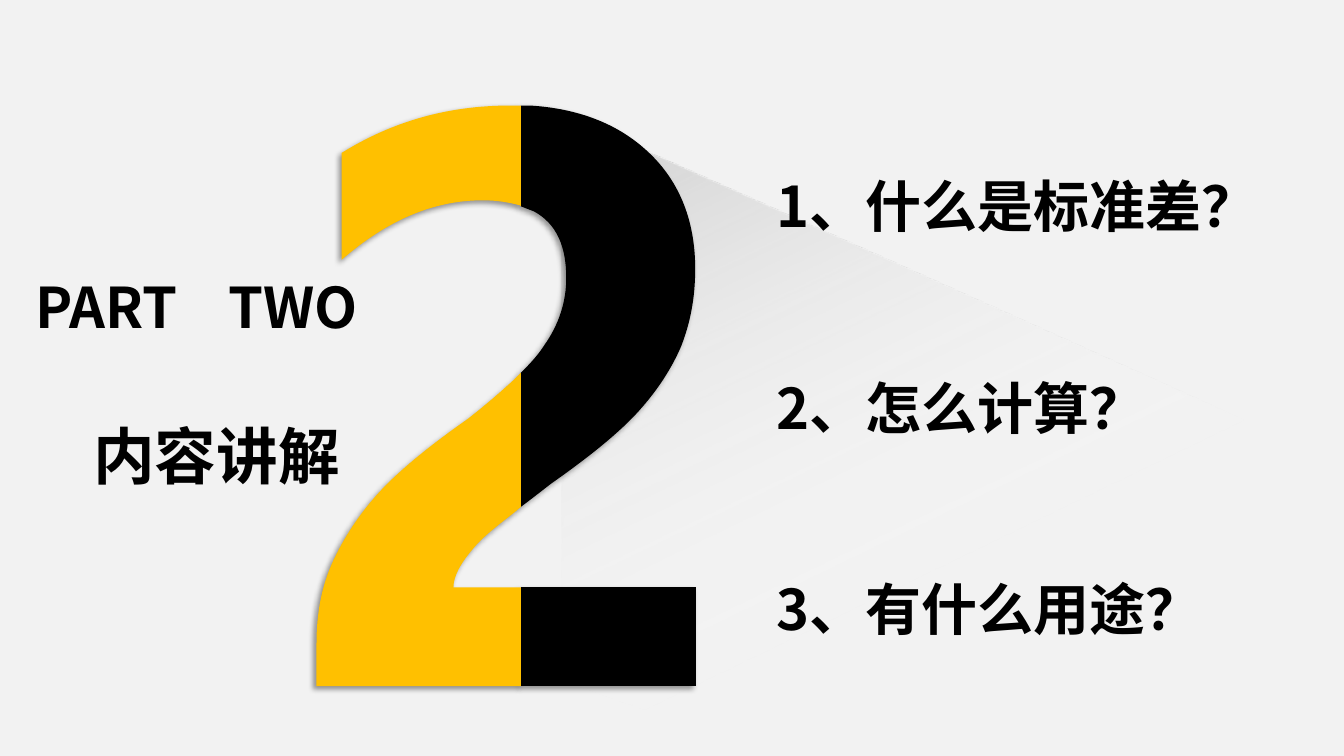
import dataclasses

import pptx
import pptx.dml.color
import pptx.enum.text
import pptx.oxml
import pptx.oxml.ns
import pptx.util

NAMESPACE = pptx.oxml.ns.nsdecls("a")


@dataclasses.dataclass(frozen=True)
class Theme:
    background: str = "F2F2F2"
    ink: str = "000000"
    accent: str = "FFC000"
    beam_tint: str = "85A3D9"
    beam_start: str = "BFBFBF"
    beam_end: str = "FFFFFF"
    latin_font: str = "Noto Sans CJK JP"
    chinese_font: str = "Noto Sans CJK SC"
    body_size: int = 40
    title_size: int = 44


@dataclasses.dataclass(frozen=True)
class Box:
    left: int
    top: int
    width: int
    height: int


THEME = Theme()

# Outlines: a pair is a corner, six numbers are a Bézier curve.
NUMERAL_GRID = (377, 576)
NUMERAL_PIECES = [
    (THEME.ink, [
        (203, 0), (213, 0), (260, 3, 298, 18, 326, 43),
        (359, 72, 376, 112, 376, 162), (376, 191, 371, 216, 362, 239),
        (352, 262, 338, 283, 320, 303), (302, 323, 273, 347, 233, 375),
        (224, 382, 215, 389, 207, 395), (203, 398), (203, 265), (205, 263),
        (214, 254, 221, 246, 226, 238), (241, 217, 248, 194, 248, 171),
        (248, 139, 238, 117, 216, 105), (203, 100)]),
    (THEME.ink, [(203, 478), (377, 478), (377, 576), (203, 576)]),
    (THEME.accent, [
        (192, 0), (203, 0), (203, 100), (202, 99),
        (191, 96, 179, 94, 165, 94), (116, 94, 70, 114, 25, 153),
        (25, 47), (75, 16, 130, 0, 192, 0)]),
    (THEME.accent, [
        (203, 265), (203, 398), (196, 404), (178, 418, 164, 429, 156, 439),
        (143, 454, 136, 467, 136, 478), (203, 478), (203, 576), (0, 576),
        (0, 534), (0, 504, 5, 477, 16, 453), (27, 429, 42, 406, 61, 385),
        (80, 364, 110, 339, 150, 311), (168, 297, 183, 284, 196, 272)]),
]
BEAM_GRID = (932, 512)
BEAM_OUTLINE = [(0, 0), (932, 0), (932, 465), (230, 512)]


def color(value):
    return pptx.dml.color.RGBColor.from_string(value)


def add_outline(shapes, box, grid, outline):
    def place(x, y):
        return (round(box.left + x * box.width / grid[0]),
                round(box.top + y * box.height / grid[1]))

    corners = [place(*segment[-2:]) for segment in outline]
    builder = shapes.build_freeform(*corners[0], scale=1.0)
    builder.add_line_segments(corners[1:], close=True)
    shape = builder.convert_to_shape()
    shape.shadow.inherit = False
    shape.line.fill.background()

    # Bend the sides that are curves
    sides = list(shape._element.iter(pptx.oxml.ns.qn("a:lnTo")))
    for side, segment in zip(sides, outline[1:]):
        if len(segment) == 6:
            controls = [place(*segment[i:i + 2]) for i in (0, 2, 4)]
            points = "".join(f'<a:pt x="{x - shape.left}" y="{y - shape.top}"/>'
                             for x, y in controls)
            side.getparent().replace(side, pptx.oxml.parse_xml(
                f'<a:cubicBezTo {NAMESPACE}>{points}</a:cubicBezTo>'))
    return shape


def add_beam(slide, box):
    shape = add_outline(slide.shapes, box, BEAM_GRID, BEAM_OUTLINE)
    shape.rotation = 24.2
    shape.fill.gradient()
    gradient = shape._element.spPr.find(pptx.oxml.ns.qn("a:gradFill"))
    # python-pptx cannot set the opacity of gradient stops
    gradient.getparent().replace(gradient, pptx.oxml.parse_xml(
        f'<a:gradFill {NAMESPACE} rotWithShape="1"><a:gsLst>'
        f'<a:gs pos="0"><a:srgbClr val="{THEME.beam_tint}"><a:alpha val="54000"/></a:srgbClr></a:gs>'
        f'<a:gs pos="0"><a:srgbClr val="{THEME.beam_start}"/></a:gs>'
        f'<a:gs pos="54000"><a:srgbClr val="{THEME.beam_end}"><a:alpha val="0"/></a:srgbClr></a:gs>'
        '</a:gsLst><a:lin ang="2400000" scaled="0"/></a:gradFill>'))


def add_numeral(slide, box):
    group = slide.shapes.add_group_shape()
    for fill, outline in NUMERAL_PIECES:
        shape = add_outline(group.shapes, box, NUMERAL_GRID, outline)
        shape.fill.solid()
        shape.fill.fore_color.rgb = color(fill)
        effects = shape._element.spPr.find(pptx.oxml.ns.qn("a:effectLst"))
        effects.append(pptx.oxml.parse_xml(
            f'<a:outerShdw {NAMESPACE} blurRad="{pptx.util.Pt(4)}" dist="{pptx.util.Pt(3)}" '
            f'dir="8100000" algn="tr" rotWithShape="0"><a:srgbClr val="{THEME.ink}">'
            '<a:alpha val="40000"/></a:srgbClr></a:outerShdw>'))


def add_text(slide, box, lines, size, font_name, alignment=None, line_spacing=None):
    shape = slide.shapes.add_textbox(box.left, box.top, box.width, box.height)
    frame = shape.text_frame
    frame.word_wrap = True
    frame.auto_size = pptx.enum.text.MSO_AUTO_SIZE.SHAPE_TO_FIT_TEXT
    for index, line in enumerate(lines):
        paragraph = frame.add_paragraph() if index else frame.paragraphs[0]
        paragraph.text = line
        paragraph.alignment = alignment
        paragraph.line_spacing = line_spacing
        paragraph.font.size = pptx.util.Pt(size)
        paragraph.font.bold = True
        paragraph.font.color.rgb = color(THEME.ink)
        paragraph.font.name = font_name
        # Chinese characters take the East Asian font
        defaults = paragraph._p.pPr.find(pptx.oxml.ns.qn("a:defRPr"))
        defaults.append(pptx.oxml.parse_xml(f'<a:ea {NAMESPACE} typeface="{font_name}"/>'))


def add_part_label(slide, box):
    add_text(slide, box, ["PART    TWO"], THEME.body_size, THEME.latin_font)


def add_section_title(slide, box):
    add_text(slide, box, ["内容讲解"], THEME.title_size, THEME.chinese_font,
             alignment=pptx.enum.text.PP_ALIGN.RIGHT)


def add_topics(slide, box):
    topics = ["什么是标准差？", "怎么计算？", "有什么用途？"]
    lines = [f"{number}、{topic}" for number, topic in enumerate(topics, 1)]
    add_text(slide, box, lines, THEME.body_size, THEME.latin_font, line_spacing=3.0)


def main():
    presentation = pptx.Presentation()
    presentation.slide_width = pptx.util.Inches(13.33)
    presentation.slide_height = pptx.util.Inches(7.5)
    slide = presentation.slides.add_slide(presentation.slide_layouts[6])
    slide.background.fill.solid()
    slide.background.fill.fore_color.rgb = color(THEME.background)

    def area(left, top, width, height):
        """Box given in percent of the slide's width and height."""
        column = presentation.slide_width / 100
        row = presentation.slide_height / 100
        return Box(round(left * column), round(top * row),
                   round(width * column), round(height * row))

    add_beam(slide, area(30.83, 37.47, 69.92, 68.27))
    add_part_label(slide, area(1.93, 35.4, 32.18, 10.27))
    add_section_title(slide, area(2.63, 54.67, 23.41, 11.2))
    add_numeral(slide, area(23.55, 13.97, 28.25, 76.8))
    add_topics(slide, area(57.03, 4.27, 43.96, 82.13))
    presentation.save("out.pptx")


if __name__ == "__main__":
    main()
